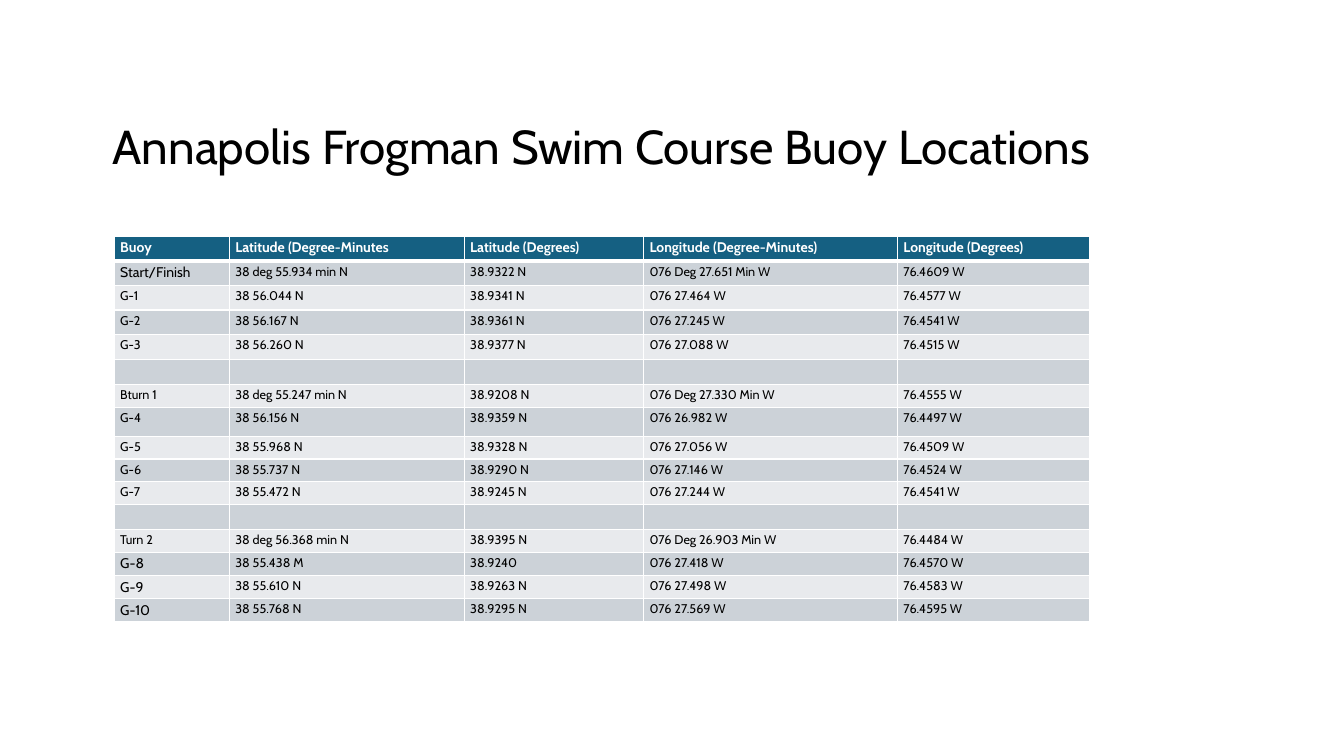
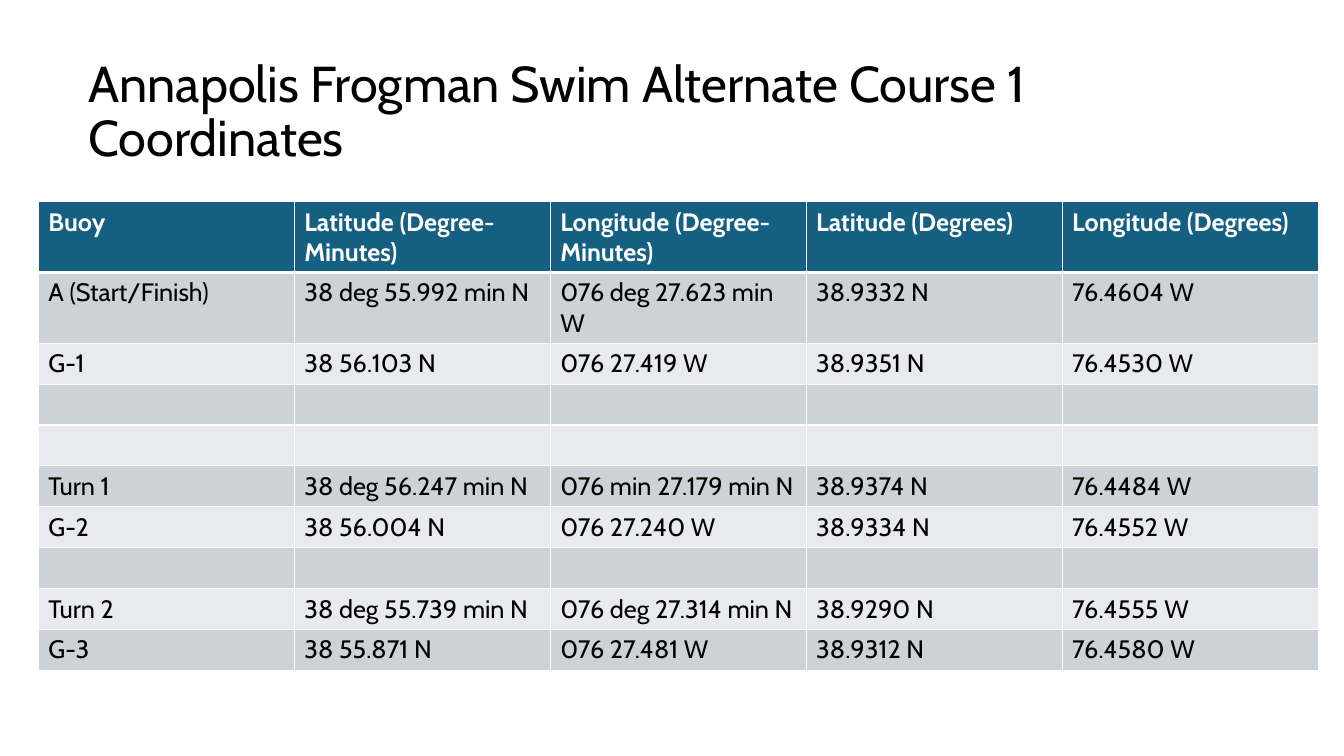
from lxml.etree import SubElement
from pptx import Presentation
from pptx.dml.color import RGBColor
from pptx.enum.text import MSO_ANCHOR
from pptx.oxml.ns import qn
from pptx.util import Cm, Pt

FONT = "Cabin"
WHITE = RGBColor(0xFF, 0xFF, 0xFF)
BLACK = RGBColor(0x00, 0x00, 0x00)
HEADER_BLUE = RGBColor(0x15, 0x60, 0x82)
BANDS = (RGBColor(0xE8, 0xEA, 0xED), RGBColor(0xCC, 0xD2, 0xD8))

# Cell margins: left, top, right, bottom
TIGHT_MARGINS = (0.15, 0.08, 0.15, 0.08)
NORMAL_MARGINS = (0.25, 0.13, 0.25, 0.13)

BLANK_ROW = ("",) * 5

MAIN_COURSE = [
    ("Buoy", "Latitude (Degree-Minutes", "Latitude (Degrees)",
     "Longitude (Degree-Minutes)", "Longitude (Degrees)"),
    ("Start/Finish", "38 deg 55.934 min N", "38.9322 N", "076 Deg 27.651 Min W", "76.4609 W"),
    ("G-1", "38 56.044 N", "38.9341 N", "076 27.464 W", "76.4577 W"),
    ("G-2", "38 56.167 N", "38.9361 N", "076 27.245 W", "76.4541 W"),
    ("G-3", "38 56.260 N", "38.9377 N", "076 27.088 W", "76.4515 W"),
    BLANK_ROW,
    ("Bturn 1", "38 deg 55.247 min N", "38.9208 N", "076 Deg 27.330 Min W", "76.4555 W"),
    ("G-4", "38 56.156 N", "38.9359 N", "076 26.982 W", "76.4497 W"),
    ("G-5", "38 55.968 N", "38.9328 N", "076 27.056 W", "76.4509 W"),
    ("G-6", "38 55.737 N", "38.9290 N", "076 27.146 W", "76.4524 W"),
    ("G-7", "38 55.472 N", "38.9245 N", "076 27.244 W", "76.4541 W"),
    BLANK_ROW,
    ("Turn 2", "38 deg 56.368 min N", "38.9395 N", "076 Deg 26.903 Min W", "76.4484 W"),
    ("G-8", "38 55.438 M", "38.9240", "076 27.418 W", "76.4570 W"),
    ("G-9", "38 55.610 N", "38.9263 N", "076 27.498 W", "76.4583 W"),
    ("G-10", "38 55.768 N", "38.9295 N", "076 27.569 W", "76.4595 W"),
]
MAIN_COLUMNS = (2.9, 5.92, 4.52, 6.4, 4.85)
MAIN_ROWS = [0.62] * 5 + [0.64, 0.57, 0.74] + [0.57] * 3 + [0.64] + [0.57] * 4
LARGE_LABELS = ("Start/Finish", "G-8", "G-9", "G-10")

ALTERNATE_COURSE = [
    ("Buoy", "Latitude (Degree-Minutes)", "Longitude (Degree-Minutes)",
     "Latitude (Degrees)", "Longitude (Degrees)"),
    ("A (Start/Finish)", "38 deg 55.992 min N", "076 deg 27.623 min W", "38.9332 N", "76.4604 W"),
    ("G-1", "38 56.103 N", "076 27.419 W", "38.9351 N", "76.4530 W"),
    BLANK_ROW,
    BLANK_ROW,
    ("Turn 1", "38 deg 56.247 min N", "076 min 27.179 min N", "38.9374 N", "76.4484 W"),
    ("G-2", "38 56.004 N", "076 27.240 W", "38.9334 N", "76.4552 W"),
    BLANK_ROW,
    ("Turn 2", "38 deg 55.739 min N", "076 deg 27.314 min N", "38.9290 N", "76.4555 W"),
    ("G-3", "38 55.871 N", "076 27.481 W", "38.9312 N", "76.4580 W"),
]
ALTERNATE_COLUMNS = (6.45,) * 5
ALTERNATE_ROWS = (1.03,) * 10


def apply_format(target, values):
    for name, value in values.items():
        setattr(target, name, value)


def write_text(paragraph, text, size, color, bold=False):
    if not text:
        # An empty cell still needs its size, which sets the row height
        end = SubElement(paragraph._p, qn("a:endParaRPr"), sz=str(size * 100))
        SubElement(end, qn("a:latin"), typeface=FONT)
        return
    run = paragraph.add_run()
    run.text = text
    apply_format(run.font, {"name": FONT, "size": Pt(size), "bold": bold})
    run.font.color.rgb = color


def add_title(slide, box, text, size):
    shape = slide.shapes.add_textbox(*map(Cm, box))
    apply_format(shape.text_frame, {"word_wrap": True, "vertical_anchor": MSO_ANCHOR.MIDDLE})
    paragraph = shape.text_frame.paragraphs[0]
    paragraph.line_spacing = 0.9
    write_text(paragraph, text, size, BLACK)


def set_borders(cell, row_index):
    """White rules, with a thick one under the header row."""
    widths = {"lnL": 1, "lnR": 1,
              "lnT": 3 if row_index == 1 else 1,
              "lnB": 3 if row_index == 0 else 1}
    properties = cell._tc.get_or_add_tcPr()
    for edge, width in widths.items():
        line = SubElement(properties, qn(f"a:{edge}"), w=str(Pt(width)))
        fill = SubElement(line, qn("a:solidFill"))
        SubElement(fill, qn("a:srgbClr"), val=str(WHITE))


def add_buoy_table(slide, left, top, rows, column_widths, row_heights,
                   margins, header_size, body_size, large_labels=()):
    frame = slide.shapes.add_table(
        len(rows), len(column_widths), Cm(left), Cm(top),
        Cm(sum(column_widths)), Cm(sum(row_heights)))
    table = frame.table
    table.horz_banding = False
    for column, width in zip(table.columns, column_widths):
        column.width = Cm(width)
    margin_names = ("margin_left", "margin_top", "margin_right", "margin_bottom")
    cell_format = dict(zip(margin_names, map(Cm, margins)))

    for row_index, (values, height) in enumerate(zip(rows, row_heights)):
        table.rows[row_index].height = Cm(height)
        header = row_index == 0
        for column_index, text in enumerate(values):
            cell = table.cell(row_index, column_index)
            apply_format(cell, cell_format)
            set_borders(cell, row_index)
            cell.fill.solid()
            cell.fill.fore_color.rgb = HEADER_BLUE if header else BANDS[row_index % 2]
            size = header_size if header or text in large_labels else body_size
            write_text(cell.text_frame.paragraphs[0], text, size,
                       WHITE if header else BLACK, header)


def add_main_course(slide):
    add_title(slide, (2.59, 2.26, 25.4, 2.97),
              "Annapolis Frogman Swim Course Buoy Locations", 34)
    add_buoy_table(slide, 2.88, 5.95, MAIN_COURSE, MAIN_COLUMNS, MAIN_ROWS,
                   TIGHT_MARGINS, 10, 9, LARGE_LABELS)


def add_alternate_course(slide):
    add_title(slide, (1.98, 1.02, 30.02, 3.68),
              "Annapolis Frogman Swim Alternate Course 1 Coordinates", 36)
    add_buoy_table(slide, 0.97, 5.08, ALTERNATE_COURSE, ALTERNATE_COLUMNS,
                   ALTERNATE_ROWS, NORMAL_MARGINS, 18, 18)


def main():
    presentation = Presentation()
    apply_format(presentation, {"slide_width": Cm(33.87), "slide_height": Cm(19.05)})
    for build in (add_main_course, add_alternate_course):
        build(presentation.slides.add_slide(presentation.slide_layouts[6]))
    presentation.save("out.pptx")


if __name__ == "__main__":
    main()
